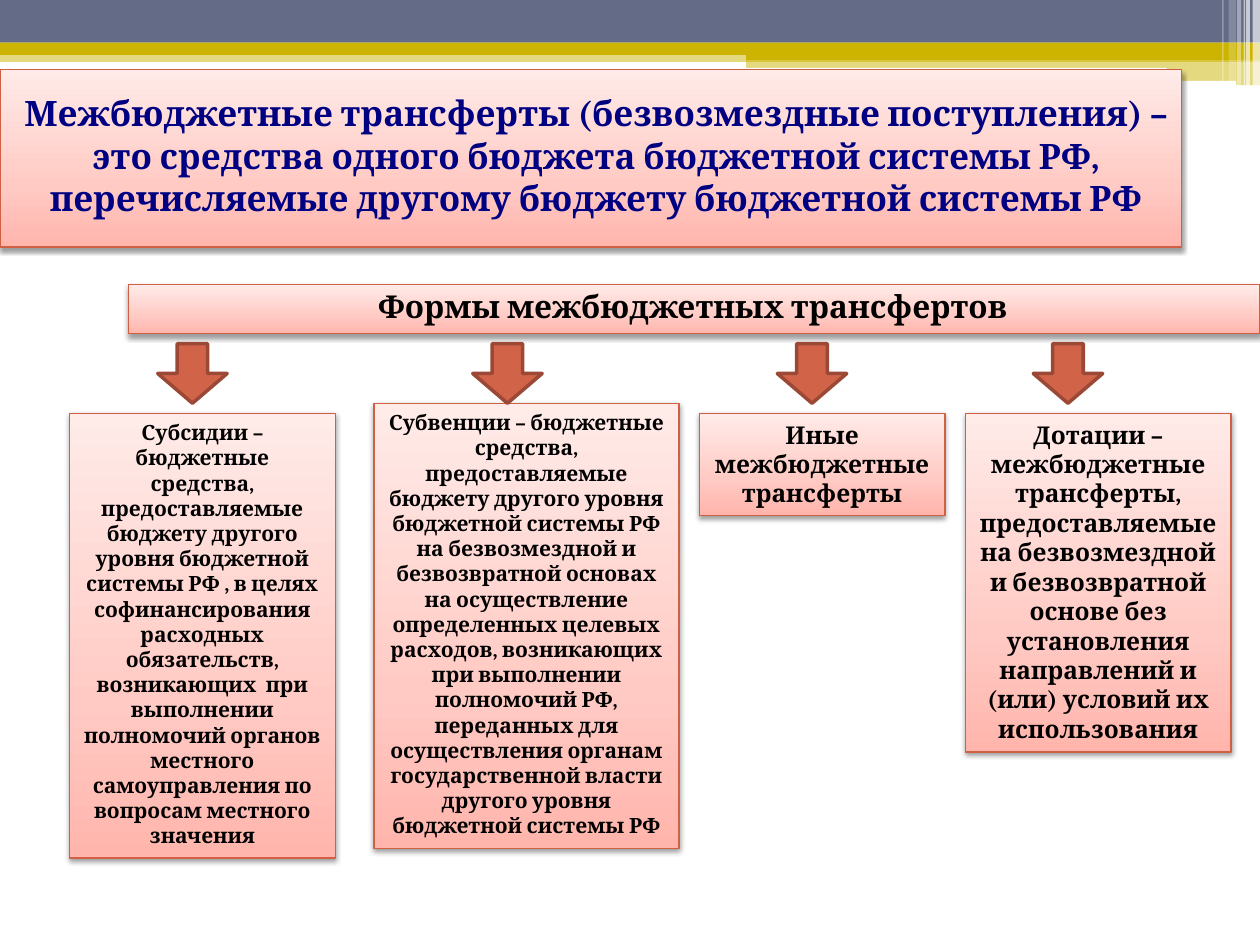
from copy import deepcopy
from lxml.etree import SubElement
from pptx import Presentation
from pptx.dml.color import RGBColor
from pptx.enum.shapes import MSO_SHAPE as Shape
from pptx.enum.text import MSO_ANCHOR as Anchor, MSO_AUTO_SIZE as AutoSize, PP_ALIGN as Align
from pptx.oxml.ns import qn
from pptx.util import Cm, Pt


def color(value):
    return RGBColor.from_string(value)


def write(box, text, size=12, ink="000000", anchor=Anchor.TOP, insets=(0.25, 0.13, 0.25, 0.13),
          spacing=None, before=0, grow=False):
    frame = box.text_frame
    frame.word_wrap = True
    frame.auto_size = AutoSize.SHAPE_TO_FIT_TEXT if grow else AutoSize.NONE
    frame.vertical_anchor = anchor
    frame.margin_left, frame.margin_top, frame.margin_right, frame.margin_bottom = map(Cm, insets)
    para = frame.paragraphs[0]
    para.alignment = Align.CENTER
    para.line_spacing = spacing
    para.space_before = Pt(before)
    span = para.add_run()
    span.text = text
    span.font.name = "Cambria"
    span.font.size = Pt(size)
    span.font.bold = True
    span.font.color.rgb = color(ink)


deck = Presentation()
deck.slide_width, deck.slide_height = Cm(25.4), Cm(19.05)
page = deck.slides.add_slide(deck.slide_layouts[6])

bands = [
    (Shape.RECTANGLE, 0, 1.02, 25.4, 0.23, "CCB400", 50),
    (Shape.RECTANGLE, 0, 0, 25.4, 0.86, "646B86", 100),
    (Shape.RECTANGLE, 0, 0.86, 25.4, 0.25, "CCB400", 100),
    (Shape.RECTANGLE, 15.04, 0.99, 10.36, 0.23, "CCB400", 100),
    (Shape.RECTANGLE, 15.04, 1.22, 10.36, 0.5, "CCB400", 50),
    (Shape.ROUNDED_RECTANGLE, 15.01, 1.37, 8.51, 0.08, "FFFFFF", 100),
    (Shape.ROUNDED_RECTANGLE, 20.47, 1.63, 4.45, 0.1, "FFFFFF", 100),
    (Shape.RECTANGLE, 25.25, 0, 0.15, 1.73, "FFFFFF", 65),
    (Shape.RECTANGLE, 25.12, 0, 0.08, 1.73, "FFFFFF", 65),
    (Shape.RECTANGLE, 25.07, 0, 0.03, 1.73, "FFFFFF", 60),
    (Shape.RECTANGLE, 24.94, 0, 0.08, 1.73, "FFFFFF", 40),
    (Shape.RECTANGLE, 24.77, 0, 0.15, 1.63, "FFFFFF", 20),
    (Shape.RECTANGLE, 24.64, 0, 0.03, 1.63, "FFFFFF", 30),
]
for kind, left, top, width, height, paint, opacity in bands:
    band = page.shapes.add_shape(kind, Cm(left), Cm(top), Cm(width), Cm(height))
    band.shadow.inherit = False
    band.fill.solid()
    band.fill.fore_color.rgb = color(paint)
    band.line.fill.background()
    if opacity < 100:
        tint = band._element.spPr.find(qn("a:solidFill")).find(qn("a:srgbClr"))
        SubElement(tint, qn("a:alpha"), val=str(opacity * 1000))

panels = [
    (0, 1.4, 23.82, 3.58,
     "Межбюджетные трансферты (безвозмездные поступления) – это средства одного бюджета "
     "бюджетной системы РФ, перечисляемые другому бюджету бюджетной системы РФ",
     dict(size=20, ink="000082", anchor=Anchor.MIDDLE, insets=(0.25, 0, 0.05, 0.13))),
    (2.59, 5.74, 22.81, 0.99, "Формы межбюджетных трансфертов",
     dict(size=18, insets=(0, 0.13, 0.05, 0.13), spacing=0.9, before=3)),
    (1.4, 8.33, 5.36, 8.97,
     "Субсидии – бюджетные средства, предоставляемые бюджету другого уровня бюджетной "
     "системы РФ , в целях софинансирования расходных обязательств, возникающих  при "
     "выполнении полномочий органов местного самоуправления по вопросам местного значения",
     dict(grow=True)),
    (7.54, 8.13, 6.15, 8.97,
     "Субвенции – бюджетные средства, предоставляемые бюджету другого уровня бюджетной "
     "системы РФ на безвозмездной и безвозвратной основах на осуществление определенных "
     "целевых расходов, возникающих при выполнении полномочий РФ, переданных для "
     "осуществления органам государственной власти другого уровня бюджетной системы РФ",
     dict(grow=True)),
    (14.1, 8.33, 4.95, 2.06, "Иные межбюджетные трансферты", dict(size=14, grow=True)),
    (19.46, 8.33, 5.36, 6.83,
     "Дотации – межбюджетные трансферты, предоставляемые на безвозмездной и безвозвратной "
     "основе без установления направлений и (или) условий их использования",
     dict(size=14, grow=True)),
]
gradient = [(0, "FFB5AC"), (0.35, "FFCAC4"), (1, "FFEBE8")]
for left, top, width, height, text, style in panels:
    panel = page.shapes.add_shape(Shape.RECTANGLE, Cm(left), Cm(top), Cm(width), Cm(height))
    panel.fill.gradient()
    panel.fill.gradient_angle = 90
    properties = panel._element.spPr
    stops = properties.find(qn("a:gradFill")).find(qn("a:gsLst"))
    stops.append(deepcopy(stops[0]))
    for stop, (position, paint) in zip(panel.fill.gradient_stops, gradient):
        stop.position = position
        stop.color.rgb = color(paint)
    panel.line.color.rgb = color("D05F44")
    panel.line.width = Pt(0.75)
    panel.shadow.inherit = False
    shadow = SubElement(properties.find(qn("a:effectLst")), qn("a:outerShdw"),
                        blurRad=str(Pt(3.1)), dist=str(Pt(1.6)), dir="5400000", rotWithShape="0")
    shade = SubElement(shadow, qn("a:srgbClr"), val="000000")
    SubElement(shade, qn("a:alpha"), val="38000")
    write(panel, text, **style)

for left in (3.18, 9.53, 15.67, 20.83):
    arrow = page.shapes.add_shape(Shape.DOWN_ARROW, Cm(left), Cm(6.93), Cm(1.4), Cm(1.2))
    arrow.adjustments[0] = 0.44
    arrow.shadow.inherit = False
    arrow.fill.solid()
    arrow.fill.fore_color.rgb = color("D16349")
    arrow.line.color.rgb = color("9B4936")
    arrow.line.width = Pt(2)

deck.save("out.pptx")
